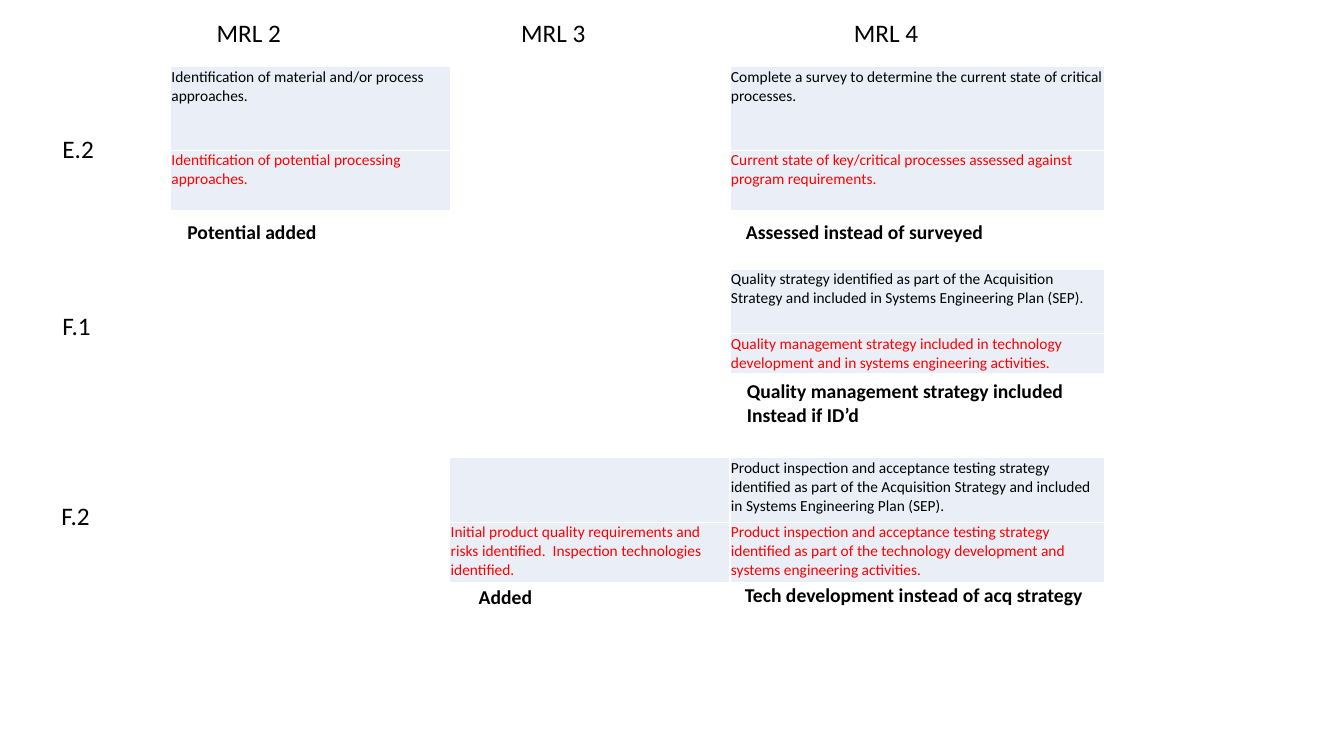
from lxml.etree import SubElement
from pptx import Presentation
from pptx.dml.color import RGBColor
from pptx.enum.text import MSO_AUTO_SIZE as AutoSize
from pptx.oxml.ns import qn
from pptx.util import Pt

PX = 9144  # EMU per px, 100 px to the inch
COLORS = {"old": "000000", "new": "FF0000", "cell": "EAEFF7", "border": "FFFFFF"}
MRL3_W, MRL4_W = 278, 372
MRL2_X, MRL3_X, MRL4_X = 169, 446, 724


def write(tf, text, size=18, color="old", bold=False):
    """Fill a text frame, one paragraph per line of text."""
    for i, line in enumerate(text.split("\n")):
        p = tf.paragraphs[0] if i == 0 else tf.add_paragraph()
        p.font.size = Pt(size)
        r = p.add_run()
        r.text = line
        r.font.name = "Calibri"
        r.font.size = Pt(size)
        r.font.bold = bold
        r.font.color.rgb = RGBColor.from_string(COLORS[color])


def format_cell(cell):
    cell.margin_left = cell.margin_right = cell.margin_top = PX
    cell.margin_bottom = 0
    tcPr = cell._tc.get_or_add_tcPr()
    for side in ("a:lnL", "a:lnR", "a:lnT", "a:lnB"):
        ln = SubElement(tcPr, qn(side), w=str(Pt(1)))
        fill = SubElement(ln, qn("a:solidFill"))
        SubElement(fill, qn("a:srgbClr"), val=COLORS["border"])
    cell.fill.solid()
    cell.fill.fore_color.rgb = RGBColor.from_string(COLORS["cell"])


prs = Presentation()
prs.slide_width, prs.slide_height = 1333 * PX, 750 * PX
s = prs.slides.add_slide(prs.slide_layouts[6])

# Headings of columns and rows, then the remarks under the tables
heading = {"size": 18}
remark = {"size": 14, "bold": True}
labels = [
    ("MRL 2", 205, 12, 85, 40, heading),
    ("MRL 3", 507, 12, 85, 40, heading),
    ("MRL 4", 837, 12, 85, 40, heading),
    ("E.2", 52, 127, 52, 40, heading),
    ("F.1", 52, 303, 48, 40, heading),
    ("F.2", 51, 491, 48, 40, heading),
    ("Potential added", 176, 213, 149, 34, remark),
    ("Assessed instead of surveyed", 730, 213, 257, 34, remark),
    ("Quality management strategy included\nInstead if ID’d", 731, 371, 340, 57, remark),
    ("Added", 465, 575, 73, 34, remark),
    ("Tech development instead of acq strategy", 729, 573, 357, 34, remark),
]
for text, x, y, w, h, style in labels:
    tf = s.shapes.add_textbox(x * PX, y * PX, w * PX, h * PX).text_frame
    tf.word_wrap = False
    tf.auto_size = AutoSize.SHAPE_TO_FIT_TEXT
    write(tf, text, **style)

# Each table holds the old wording above the new one
tables = [
    (MRL2_X, 66, [MRL3_W], [83, 60], [
        ["Identification of material and/or process approaches."],
        ["Identification of potential processing approaches."],
    ]),
    (MRL4_X, 66, [MRL4_W], [83, 60], [
        ["Complete a survey to determine the current state of critical processes."],
        ["Current state of key/critical processes assessed against program requirements."],
    ]),
    (MRL4_X, 267, [MRL4_W], [64, 40], [
        ["Quality strategy identified as part of the Acquisition Strategy "
         "and included in Systems Engineering Plan (SEP)."],
        ["Quality management strategy included in technology development "
         "and in systems engineering activities."],
    ]),
    (MRL3_X, 454, [MRL3_W, MRL4_W], [64, 60], [
        ["",
         "Product inspection and acceptance testing strategy identified as part of "
         "the Acquisition Strategy and included in Systems Engineering Plan (SEP)."],
        ["Initial product quality requirements and risks identified.  "
         "Inspection technologies identified.",
         "Product inspection and acceptance testing strategy identified as part of "
         "the technology development and systems engineering activities."],
    ]),
]
for x, y, widths, heights, rows in tables:
    table = s.shapes.add_table(len(heights), len(widths), x * PX, y * PX,
                               sum(widths) * PX, sum(heights) * PX).table
    table.first_row = table.horz_banding = False
    for col, w in zip(table.columns, widths):
        col.width = w * PX
    for row, h, texts, color in zip(table.rows, heights, rows, ("old", "new")):
        row.height = h * PX
        for cell, text in zip(row.cells, texts):
            format_cell(cell)
            if text:
                write(cell.text_frame, text, size=11, color=color)

prs.save("out.pptx")
